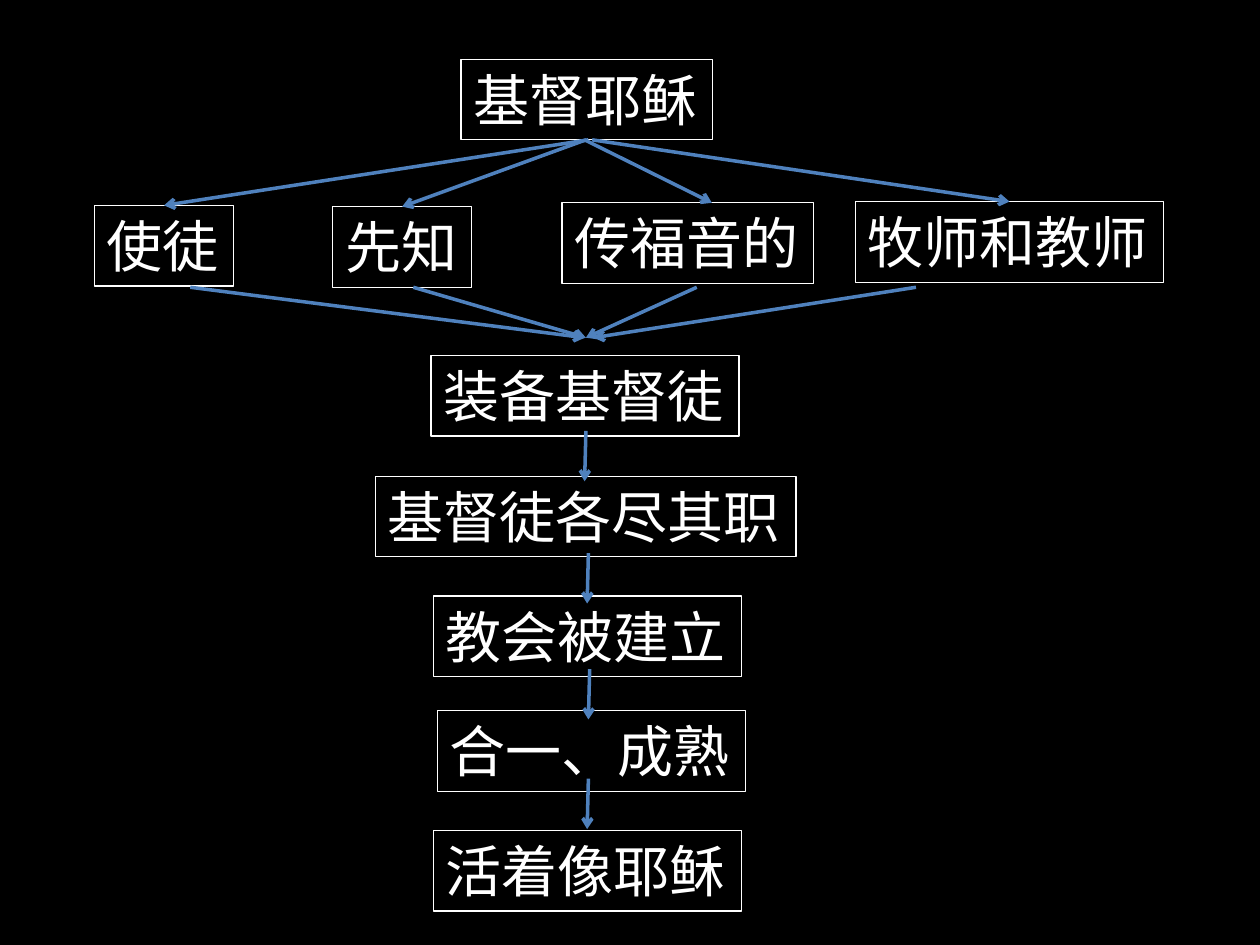
from lxml.etree import SubElement
from pptx import Presentation
from pptx.dml.color import RGBColor
from pptx.enum.shapes import MSO_CONNECTOR as Connector
from pptx.enum.text import MSO_AUTO_SIZE as AutoSize, MSO_ANCHOR as Anchor
from pptx.oxml.ns import qn
from pptx.util import Inches, Pt

BOX_HEIGHT = 0.64
CHAR_WIDTH, BOX_PADDING = 0.447, 0.21

# Each entry: wording, left, top
SOURCE = ("基督耶稣", 3.66, 0.47)
MINISTRIES = [
    ("使徒", 0.75, 1.63),
    ("先知", 2.64, 1.64),
    ("传福音的", 4.46, 1.61),
    ("牧师和教师", 6.79, 1.6),
]
OUTCOMES = [
    ("装备基督徒", 3.42, 2.82),
    ("基督徒各尽其职", 2.98, 3.78),
    ("教会被建立", 3.44, 4.73),
    ("合一、成熟", 3.47, 5.64),
    ("活着像耶稣", 3.44, 6.59),
]

SOURCE_EXITS = [4.67, 4.65, 4.64, 4.7]
MINISTRY_EXITS = [1.51, 3.28, 5.53, 7.27]
MERGE_ENTRIES = [4.64, 4.65, 4.65, 4.71]
FAN_TOP, MERGE_TOP, MERGE_BOTTOM = 1.11, 2.28, 2.68
# Each entry: start x, start y of a step down
STEPS = [(4.65, 3.42), (4.67, 4.39), (4.68, 5.31), (4.67, 6.18)]
STEP_SHIFT, STEP_LENGTH = -0.01, 0.4


def color(hex_value):
    return RGBColor.from_string(hex_value)


def apply_format(target, values):
    for attribute, value in values.items():
        setattr(target, attribute, value)


def box_width(wording):
    return BOX_PADDING + CHAR_WIDTH * len(wording)


class Diagram:
    background, ink, arrow_color = "000000", "FFFFFF", "4F81BD"
    font_format = {"name": "Noto Sans CJK SC", "size": Pt(32)}
    frame_format = {
        "word_wrap": False,
        "auto_size": AutoSize.SHAPE_TO_FIT_TEXT,
        "vertical_anchor": Anchor.TOP,
    }

    def __init__(self, slide):
        self.slide = slide
        fill = slide.background.fill
        fill.solid()
        fill.fore_color.rgb = color(self.background)

    def box(self, wording, left, top):
        label = self.slide.shapes.add_textbox(
            Inches(left), Inches(top),
            Inches(box_width(wording)), Inches(BOX_HEIGHT))
        self.outline(label.line, self.ink, 0.75)
        apply_format(label.text_frame, self.frame_format)
        run = label.text_frame.paragraphs[0].add_run()
        run.text = wording
        apply_format(run.font, self.font_format)
        run.font.color.rgb = color(self.ink)
        SubElement(run.font._element, qn("a:ea"),
                   typeface=self.font_format["name"])

    def arrow(self, start, end):
        link = self.slide.shapes.add_connector(
            Connector.STRAIGHT, *map(Inches, (*start, *end)))
        self.outline(link.line, self.arrow_color, 2)
        SubElement(link.line._get_or_add_ln(), qn("a:tailEnd"), type="arrow")
        SubElement(link._element.spPr, qn("a:effectLst"))

    def outline(self, line, hex_value, points):
        line.color.rgb = color(hex_value)
        line.width = Pt(points)


def main():
    deck = Presentation()
    apply_format(deck, {"slide_width": Inches(10), "slide_height": Inches(7.5)})
    diagram = Diagram(deck.slides.add_slide(deck.slide_layouts[6]))

    for entry in [SOURCE, *MINISTRIES, *OUTCOMES]:
        diagram.box(*entry)

    for exit_x, (wording, left, top) in zip(SOURCE_EXITS, MINISTRIES):
        center = left + box_width(wording) / 2
        # The evangelist arrow lands right of its box centre
        target = 5.65 if wording == "传福音的" else center
        diagram.arrow((exit_x, FAN_TOP), (target, top))

    for exit_x, entry_x in zip(MINISTRY_EXITS, MERGE_ENTRIES):
        diagram.arrow((exit_x, MERGE_TOP), (entry_x, MERGE_BOTTOM))

    for x, y in STEPS:
        diagram.arrow((x, y), (x + STEP_SHIFT, y + STEP_LENGTH))

    deck.save("out.pptx")


if __name__ == "__main__":
    main()
